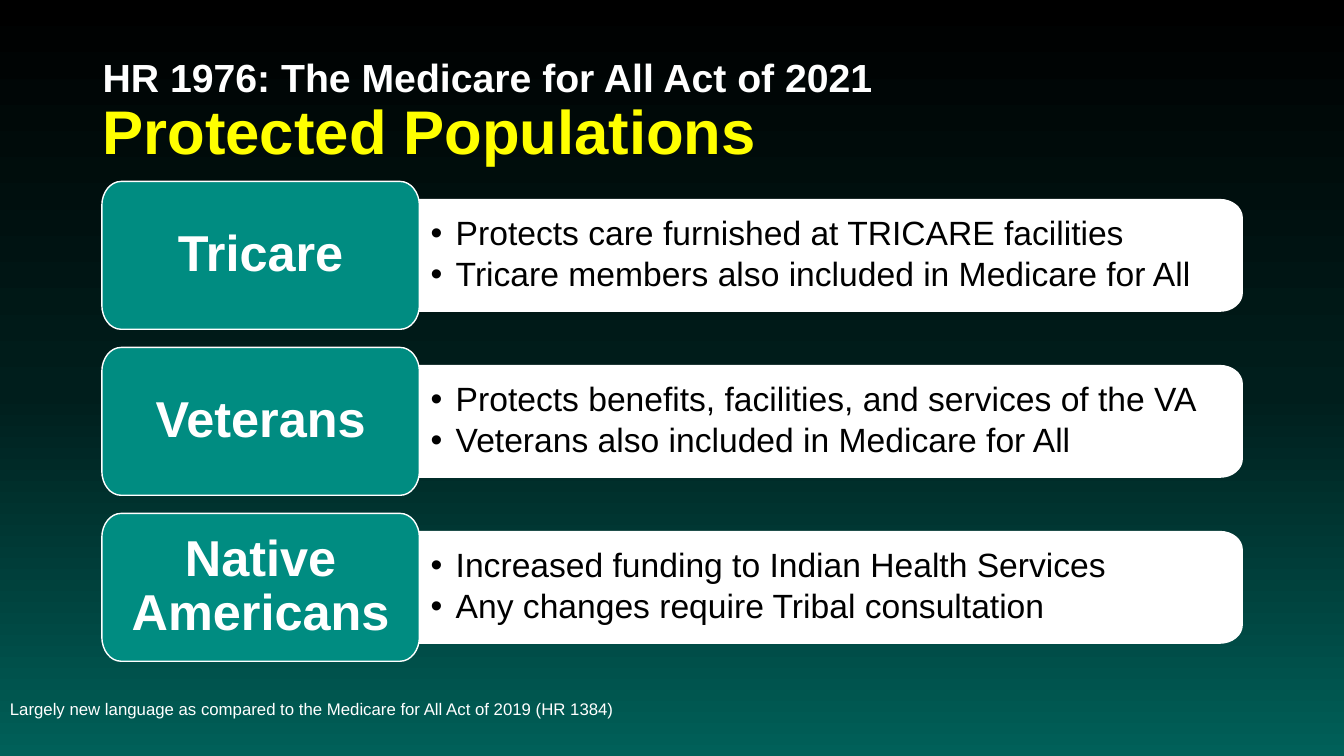
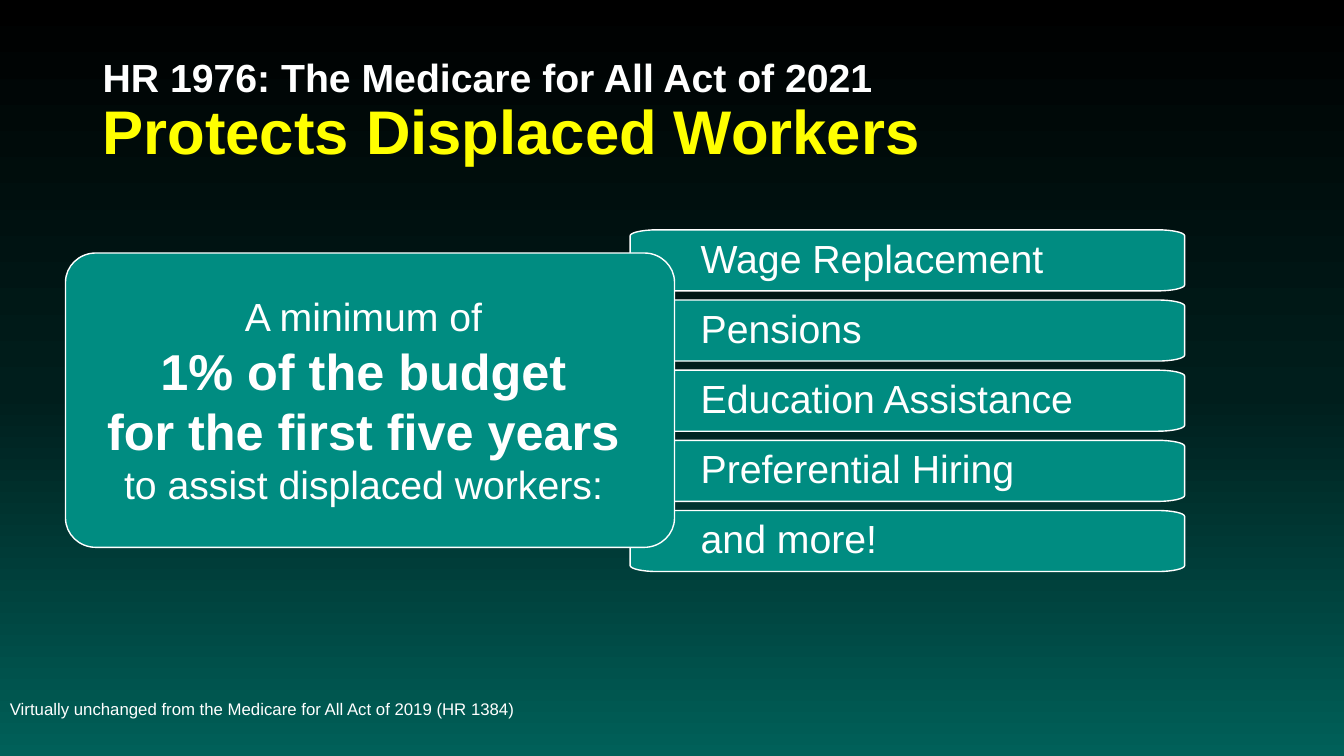
from copy import deepcopy

from lxml import etree
from pptx import Presentation
from pptx.dml.color import RGBColor
from pptx.enum.text import MSO_ANCHOR, PP_ALIGN
from pptx.oxml.ns import qn
from pptx.util import Inches, Pt

MIDDLE = MSO_ANCHOR.MIDDLE
LEFT, CENTER = PP_ALIGN.LEFT, PP_ALIGN.CENTER
FONT = "Arial"
WHITE, BLACK, YELLOW, TEAL = "FFFFFF", "000000", "FFFF00", "008C81"
BACKGROUND = [(0, BLACK), (0.52, "001E1C"), (1, "006059")]
BILL = "HR 1976: The Medicare for All Act of 2021"
BLANK_LAYOUT = 6
ROUNDNESS = 0.55

POPULATIONS = [
    ("Tricare", ["Protects care furnished at TRICARE facilities",
                 "Tricare members also included in Medicare for All"]),
    ("Veterans", ["Protects benefits, facilities, and services of the VA",
                  "Veterans also included in Medicare for All"]),
    ("Native Americans", ["Increased funding to Indian Health Services",
                          "Any changes require Tribal consultation"]),
]
BENEFITS = ["Wage Replacement", "Pensions", "Education Assistance",
            "Preferential Hiring", "and more!"]
BUDGET_LINES = [("A minimum of", 28, False), ("1% of the budget", 36, True),
                ("for the first five years", 36, True),
                ("to assist displaced workers:", 28, False)]


def color(value):
    return RGBColor.from_string(value)


def set_font(font, size, value, bold=False):
    font.name, font.size, font.bold = FONT, Pt(size), bold
    font.color.rgb = color(value)


def set_frame(shape, insets=(0.1, 0.05, 0.1, 0.05)):
    frame = shape.text_frame
    frame.word_wrap = True
    frame.vertical_anchor = MIDDLE
    (frame.margin_left, frame.margin_top,
     frame.margin_right, frame.margin_bottom) = map(Inches, insets)
    return frame


def add_bullet(para):
    props = para._p.get_or_add_pPr()
    props.set("marL", str(Inches(0.25)))
    props.set("indent", str(Inches(-0.25)))
    etree.SubElement(props, qn("a:buFont")).set("typeface", FONT)
    etree.SubElement(props, qn("a:buChar")).set("char", "•")


def write_lines(frame, lines, align=LEFT, spacing=0.9, value=WHITE, bullet=False):
    for index, (text, size, bold) in enumerate(lines):
        para = frame.add_paragraph() if index else frame.paragraphs[0]
        if bullet:
            add_bullet(para)
            para.space_before = Pt(3.6 if index else 0)
        para.text = text
        para.alignment = align
        para.line_spacing = spacing
        set_font(para.font, size, value, bold)


def round_corner(panel, segment, entry, corner, leave):
    curve = etree.Element(qn("a:cubicBezTo"))
    first, second = [[start + ROUNDNESS * (end - start) for start, end in zip(point, corner)]
                     for point in (entry, leave)]
    for x, y in (first, second, leave):
        node = etree.SubElement(curve, qn("a:pt"))
        node.set("x", str(Inches(x) - panel.left))
        node.set("y", str(Inches(y) - panel.top))
    segment.getparent().replace(segment, curve)


def add_panel(page, box, radii, fill, insets, left_round=True):
    left, top, width, height = box
    right, bottom = left + width, top + height
    rx, ry = radii
    corners = [((right - rx, top), (right, top), (right, top + ry)),
               ((right, bottom - ry), (right, bottom), (right - rx, bottom))]
    if left_round:
        corners += [((left + rx, bottom), (left, bottom), (left, bottom - ry)),
                    ((left, top + ry), (left, top), (left + rx, top))]
    points = [point for entry, _, leave in corners for point in (entry, leave)]
    if not left_round:
        points += [(left, bottom), (left, top)]
    points = [(Inches(x), Inches(y)) for x, y in points]
    builder = page.shapes.build_freeform(*points[0])
    builder.add_line_segments(points[1:], close=True)
    panel = builder.convert_to_shape()
    segments = list(panel.element.iter(qn("a:lnTo")))
    for segment, corner in zip(segments[::2], corners):
        round_corner(panel, segment, *corner)
    panel.shadow.inherit = False
    panel.fill.solid()
    panel.fill.fore_color.rgb = color(fill)
    panel.line.color.rgb = color(WHITE)
    panel.line.width = Pt(1)
    return set_frame(panel, insets)


def add_text_box(page, box):
    return set_frame(page.shapes.add_textbox(*map(Inches, box)))


def set_background(deck):
    master = deck.slide_master
    fill = master.background.fill
    fill.gradient()
    fill.gradient_angle = 270
    stop_list = master.element.find(".//" + qn("a:gsLst"))
    stop_list.append(deepcopy(stop_list[-1]))
    for stop, (position, value) in zip(fill.gradient_stops, BACKGROUND):
        stop.position = position
        stop.color.rgb = color(value)


def add_page(deck, heading, footnote):
    page = deck.slides.add_slide(deck.slide_layouts[BLANK_LAYOUT])
    para = add_text_box(page, (0.92, 0.4, 11.5, 1.45)).paragraphs[0]
    para.line_spacing = 0.9
    span = para.add_run()
    span.text = BILL
    set_font(span.font, 28, WHITE, True)
    para.add_line_break()
    span = para.add_run()
    span.text = heading
    set_font(span.font, 44, YELLOW, True)
    write_lines(add_text_box(page, (0, 6.58, 9, 0.92)), [(footnote, 12, False)])
    return page


def add_population(page, box, name, protections):
    left, top, width, height = box
    label_width, overlap, step = 3.15, 0.19, 0.18
    body_left = left + label_width - overlap
    body = (body_left, top + step, left + width - body_left, height - 2 * step)
    frame = add_panel(page, body, (0.22, 0.18), WHITE, (0.3, 0.1, 0.15, 0.1), False)
    write_lines(frame, [(text, 24, False) for text in protections],
                value=BLACK, bullet=True)
    label = (left, top, label_width, height)
    frame = add_panel(page, label, (0.19, 0.24), TEAL, (0.1, 0.16, 0.1, 0.16))
    write_lines(frame, [(name, 36, True)], CENTER)


def add_populations(page, box):
    left, top, width, height = box
    gap = 0.18
    row = (height - gap * (len(POPULATIONS) - 1)) / len(POPULATIONS)
    for index, (name, protections) in enumerate(POPULATIONS):
        add_population(page, (left, top + index * (row + gap), width, row),
                       name, protections)


def add_benefits(page, box):
    left, top, width, height = box
    gap = 0.09
    row = (height - gap * (len(BENEFITS) - 1)) / len(BENEFITS)
    for index, benefit in enumerate(BENEFITS):
        bar = (left, top + index * (row + gap), width, row)
        frame = add_panel(page, bar, (0.27, 0.06), TEAL, (0.7, 0.02, 0.02, 0.02))
        write_lines(frame, [(benefit, 28, False)])


def add_budget_card(page, box):
    frame = add_panel(page, box, (0.3, 0.29), TEAL, (0.02, 0.02, 0.15, 0.02))
    write_lines(frame, BUDGET_LINES, CENTER, spacing=1.0)


def main():
    deck = Presentation()
    deck.slide_width, deck.slide_height = Inches(13.33), Inches(7.5)
    set_background(deck)
    page = add_page(deck, "Protected Populations",
                    "Largely new language as compared to the Medicare for All Act "
                    "of 2019 (HR 1384)")
    add_populations(page, (1.01, 1.8, 11.31, 4.76))
    page = add_page(deck, "Protects Displaced Workers",
                    "Virtually unchanged from the Medicare for All Act of 2019 (HR 1384)")
    add_benefits(page, (6.25, 2.28, 5.5, 3.39))
    add_budget_card(page, (0.65, 2.51, 6.04, 2.92))
    deck.save("out.pptx")


if __name__ == "__main__":
    main()
